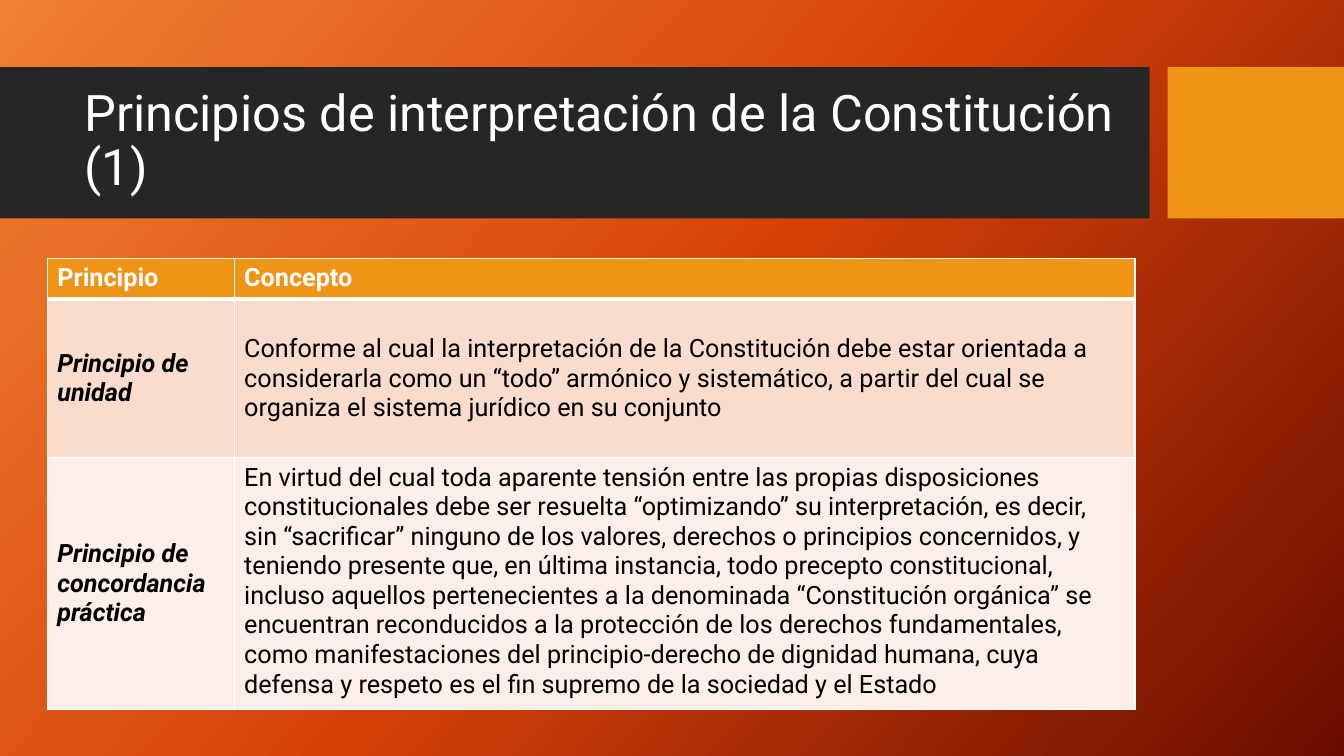
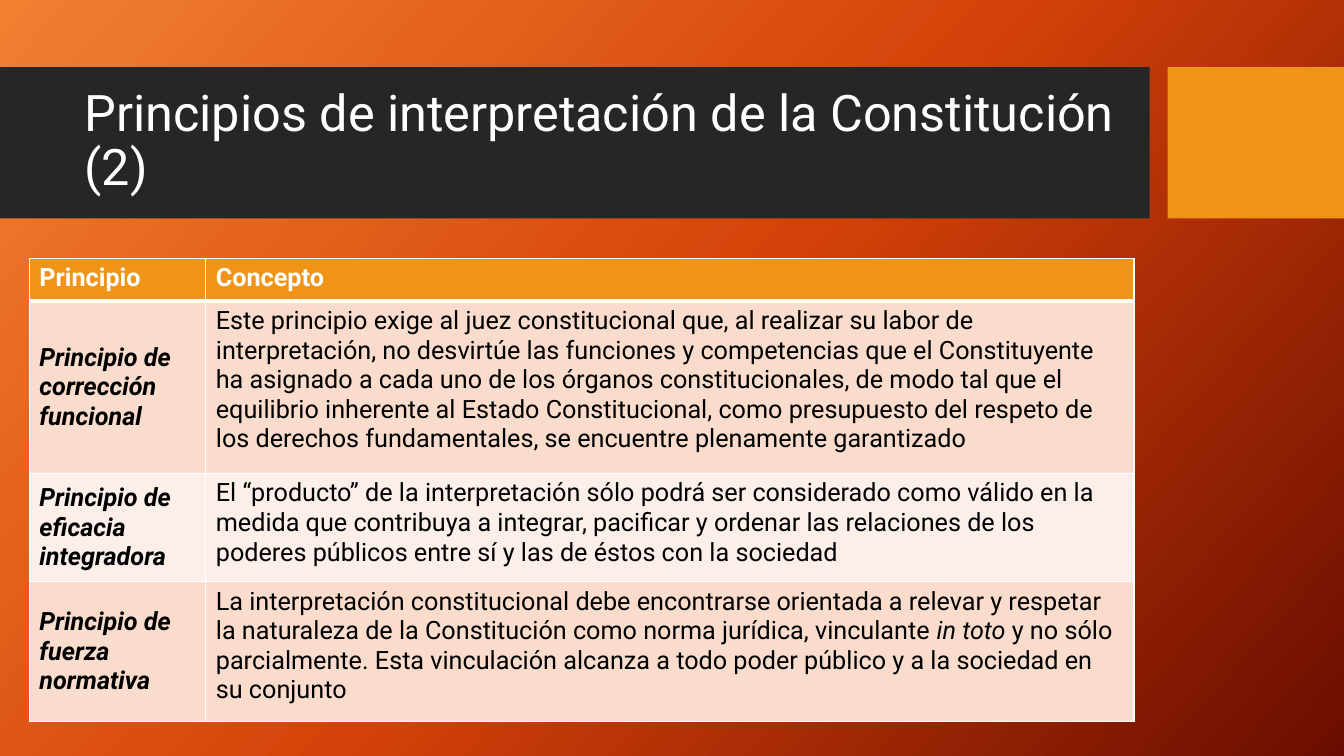
"""Build two slides on the principles of constitutional interpretation."""
from copy import deepcopy
from dataclasses import dataclass

from lxml import etree
from pptx import Presentation
from pptx import util as u
from pptx.dml.color import RGBColor
from pptx.enum import shapes, text
from pptx.oxml import ns


@dataclass(frozen=True)
class Theme:
    """Hold the colours, type sizes and line widths of the deck."""
    font: str = "Roboto"
    white: str = "FFFFFF"
    black: str = "000000"
    band: str = "262626"
    accent: str = "F09415"
    rows: tuple = ("F9DCCC", "FCEEE8")
    backdrop: tuple = ((0, "F18031"), (0.5, "D54209"), (1, "6A0D00"))
    backdrop_angle: int = 42
    title_size: int = 36
    body_size: int = 18
    thin: int = 1
    thick: int = 3


T = Theme()
HEADER = ("Principio", "Concepto")
TOP, MIDDLE = text.MSO_ANCHOR.TOP, text.MSO_ANCHOR.MIDDLE

SLIDES = (
    dict(
        title="Principios de interpretación de la Constitución (1)",
        left=45, cols=(178, 858), heights=(39, 151, 235),
        rows=(
            ("Principio de unidad", MIDDLE, (
                ("Conforme al cual la interpretación de la Constitución debe estar "
                 "orientada a considerarla como un “todo” armónico y sistemático, a "
                 "partir del cual se organiza el sistema jurídico en su conjunto", False),)),
            ("Principio de concordancia práctica", TOP, (
                ("En virtud del cual toda aparente tensión entre las propias "
                 "disposiciones constitucionales debe ser resuelta “optimizando” su "
                 "interpretación, es decir, sin “sacrificar” ninguno de los valores, "
                 "derechos o principios concernidos, y teniendo presente que, en última "
                 "instancia, todo precepto constitucional, incluso aquellos "
                 "pertenecientes a la denominada “Constitución orgánica” se encuentran "
                 "reconducidos a la protección de los derechos fundamentales, como "
                 "manifestaciones del principio-derecho de dignidad humana, cuya defensa "
                 "y respeto es el fin supremo de la sociedad y el Estado", False),)),
        ),
    ),
    dict(
        title="Principios de interpretación de la Constitución (2)",
        left=28, cols=(168, 884), heights=(41, 164, 103, 133),
        rows=(
            ("Principio de corrección funcional", TOP, (
                ("Este principio exige al juez constitucional que, al realizar su labor "
                 "de interpretación, no desvirtúe las funciones y competencias que el "
                 "Constituyente ha asignado a cada uno de los órganos constitucionales, "
                 "de modo tal que el equilibrio inherente al Estado Constitucional, como "
                 "presupuesto del respeto de los derechos fundamentales, se encuentre "
                 "plenamente garantizado", False),)),
            ("Principio de eficacia integradora", TOP, (
                ("El “producto” de la interpretación sólo podrá ser considerado como "
                 "válido en la medida que contribuya a integrar, pacificar y ordenar las "
                 "relaciones de los poderes públicos entre sí y las de éstos con la "
                 "sociedad", False),)),
            ("Principio de fuerza normativa", TOP, (
                ("La interpretación constitucional debe encontrarse orientada a relevar "
                 "y respetar la naturaleza de la Constitución como norma jurídica, "
                 "vinculante ", False),
                ("in toto ", True),
                ("y no sólo parcialmente. Esta vinculación alcanza a todo poder público "
                 "y a la sociedad en su conjunto", False))),
        ),
    ),
)


def px(n):
    """Turn pixels into EMU."""
    return u.Emu(n * 9525)


def rgb(value):
    """Turn a hex string into a colour."""
    return RGBColor.from_string(value)


def add_run(p, words, size, color, bold=False, italic=False):
    """Add one styled run to a paragraph."""
    r = p.add_run()
    r.text = words
    f = r.font
    f.name, f.size, f.bold, f.italic = T.font, u.Pt(size), bold, italic
    f.color.rgb = rgb(color)


def paint_backdrop(master):
    """Give the master a diagonal three-colour gradient."""
    fill = master.background.fill
    fill.gradient()
    fill.gradient_angle = 360 - T.backdrop_angle
    stops = master.element.find(".//" + ns.qn("p:bg")).find(".//" + ns.qn("a:gsLst"))
    stops.append(deepcopy(stops[-1]))
    for stop, (position, color) in zip(fill.gradient_stops, T.backdrop):
        stop.position = position
        stop.color.rgb = rgb(color)


def add_block(s, left, width, color):
    """Add a plain rectangle at the height of the title band."""
    sp = s.shapes.add_shape(shapes.MSO_SHAPE.RECTANGLE, px(left), px(64), px(width), px(144))
    sp.shadow.inherit = False
    sp.fill.solid()
    sp.fill.fore_color.rgb = rgb(color)
    sp.line.fill.background()


def add_title(s, words):
    """Add the title band, its accent block and the title."""
    add_block(s, 0, 1095, T.band)
    add_block(s, 1112, 168, T.accent)
    tf = s.shapes.add_textbox(px(71), px(79), px(1009), px(113)).text_frame
    tf.word_wrap = True
    tf.vertical_anchor = MIDDLE
    p = tf.paragraphs[0]
    p.line_spacing = 0.9
    add_run(p, words, T.title_size, T.white)


def style_cell(cell, color, anchor, top, bottom):
    """Set the borders, fill and anchor of a cell."""
    tc_pr = cell._tc.get_or_add_tcPr()
    for side, width in (("L", T.thin), ("R", T.thin), ("T", top), ("B", bottom)):
        ln = etree.SubElement(tc_pr, ns.qn("a:ln" + side), w=str(u.Pt(width)))
        solid = etree.SubElement(ln, ns.qn("a:solidFill"))
        etree.SubElement(solid, ns.qn("a:srgbClr"), val=T.white)
    cell.fill.solid()
    cell.fill.fore_color.rgb = rgb(color)
    cell.vertical_anchor = anchor


def add_principles(s, left, cols, heights, rows):
    """Add the table of principles and concepts."""
    table = s.shapes.add_table(len(heights), len(cols), px(left), px(246),
                               px(sum(cols)), px(sum(heights))).table
    table.first_row = table.horz_banding = False
    for column, width in zip(table.columns, cols):
        column.width = px(width)
    for row, height in zip(table.rows, heights):
        row.height = px(height)
    for cell, words in zip(table.rows[0].cells, HEADER):
        style_cell(cell, T.accent, TOP, T.thin, T.thick)
        add_run(cell.text_frame.paragraphs[0], words, T.body_size, T.white, bold=True)
    for i, (name, anchor, concept) in enumerate(rows):
        name_cell, concept_cell = table.rows[i + 1].cells
        color = T.rows[i % len(T.rows)]
        top = T.thin if i else T.thick
        style_cell(name_cell, color, MIDDLE, top, T.thin)
        style_cell(concept_cell, color, anchor, top, T.thin)
        add_run(name_cell.text_frame.paragraphs[0], name, T.body_size, T.black,
                bold=True, italic=True)
        for words, italic in concept:
            add_run(concept_cell.text_frame.paragraphs[0], words, T.body_size, T.black,
                    italic=italic)


def main():
    """Build and save the deck."""
    prs = Presentation()
    prs.slide_width, prs.slide_height = px(1280), px(720)
    paint_backdrop(prs.slide_master)
    for content in SLIDES:
        s = prs.slides.add_slide(prs.slide_layouts[6])
        add_title(s, content["title"])
        add_principles(s, content["left"], content["cols"], content["heights"],
                       content["rows"])
    prs.save("out.pptx")


if __name__ == "__main__":
    main()
